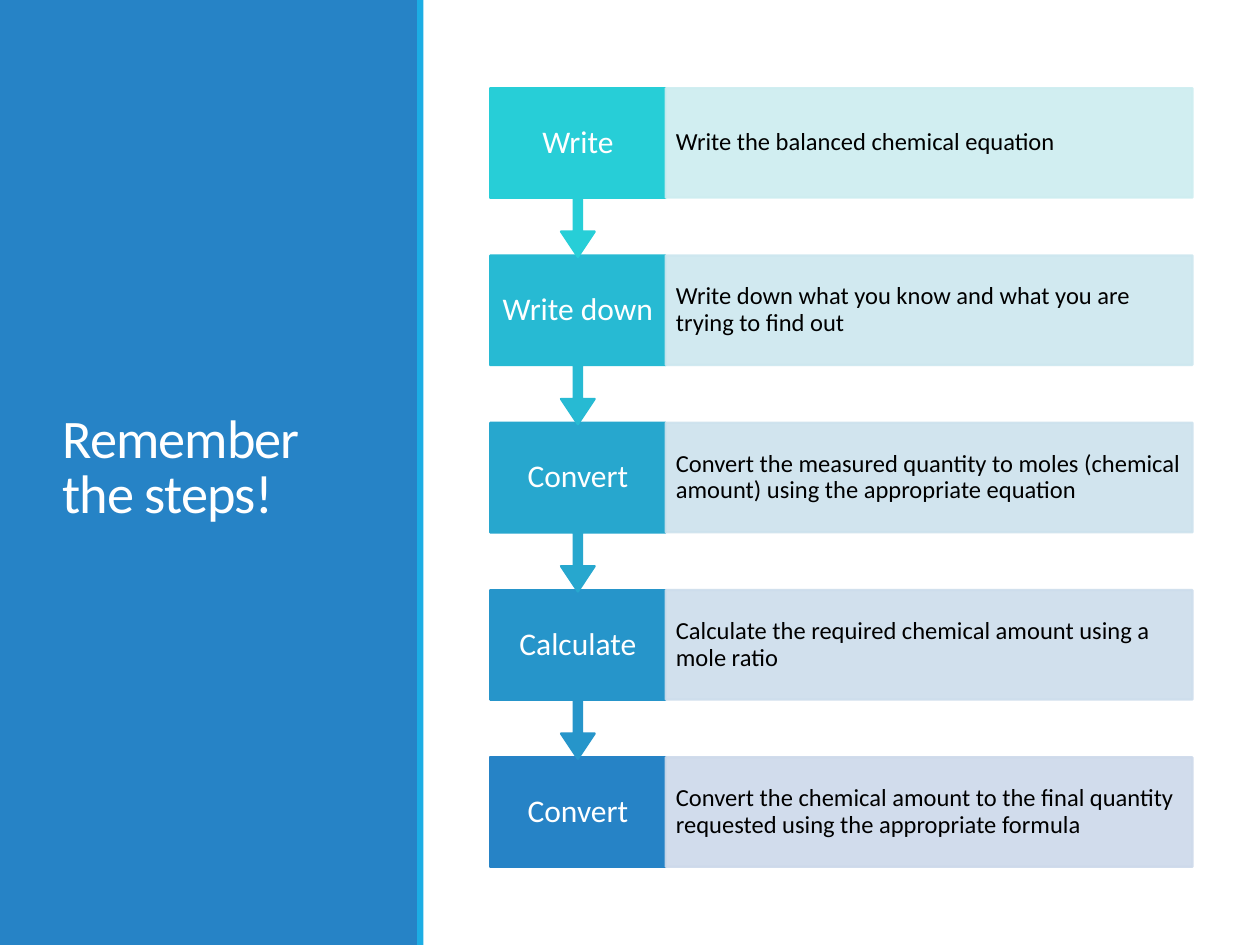
from lxml.etree import SubElement as Sub
from pptx import Presentation
from pptx.dml.color import RGBColor
from pptx.enum.shapes import MSO_SHAPE as Kind
from pptx.enum.text import MSO_ANCHOR as Anchor, PP_ALIGN as Align
from pptx.oxml.ns import qn
from pptx.util import Pt

STEPS = [
    ("Write", "Write the balanced chemical equation", "27CED7", "CDEDF0"),
    ("Write down", "Write down what you know and what you are trying to find out",
     "27BAD3", "CDE7EF"),
    ("Convert", "Convert the measured quantity to moles (chemical amount) "
     "using the appropriate equation", "27A7CE", "CDE2ED"),
    ("Calculate", "Calculate the required chemical amount using a mole ratio",
     "2695CA", "CDDDEC"),
    ("Convert", "Convert the chemical amount to the final quantity requested "
     "using the appropriate formula", "2683C6", "CDD9EA"),
]
LEFT, TOP, PITCH = 280.1, 50.4, 95.6
TAG, PANEL, HIGH, DROP = 100.3, 301, 62.6, 96.4


def paint(item, color):
    item.rgb = RGBColor.from_string(color)


def block(slide, kind, box, color, edge=False):
    shape = slide.shapes.add_shape(kind, *map(Pt, box))
    shape.shadow.inherit = False
    shape.fill.solid()
    paint(shape.fill.fore_color, color)
    if edge:
        shape.line.width = Pt(1.25)
        paint(shape.line.color, color)
    else:
        shape.line.fill.background()
    return shape


def fade(shape, share):
    for node in shape._element.spPr.iter(qn("a:srgbClr")):
        Sub(node, qn("a:alpha"), val=str(share * 1000))


def write(shape, text, size, color, align, space, pads):
    frame = shape.text_frame
    frame.word_wrap = True
    frame.vertical_anchor = Anchor.MIDDLE
    frame.margin_left = frame.margin_right = Pt(pads[0])
    frame.margin_top = frame.margin_bottom = Pt(pads[1])
    para = frame.paragraphs[0]
    para.text = text
    para.alignment = align
    para.line_spacing = space
    para.font.name = "Calibri"
    para.font.size = Pt(size)
    paint(para.font.color, color)
    return para


def title(slide, text):
    box = slide.shapes.add_textbox(*map(Pt, (28.8, 41, 182.2, 454.3)))
    para = write(box, text, 31, "FFFFFF", Align.LEFT, 0.85, (7.2, 3.6))
    for run in para.runs:
        run.font._element.set("spc", "-50")


def step(slide, row, label, text, dark, light):
    top = TOP + row * PITCH
    if row == len(STEPS) - 1:
        tag = block(slide, Kind.RECTANGLE, (LEFT, top, TAG, HIGH), dark, True)
    else:
        tag = block(slide, Kind.DOWN_ARROW_CALLOUT,
                    (LEFT, top, TAG, DROP), dark, True)
        for spot, value in enumerate((0.05, 0.1, 0.15, 0.65)):
            tag.adjustments[spot] = value
    write(tag, label, 18, "FFFFFF", Align.CENTER, 0.9, (7.1, 10.1))
    panel = block(slide, Kind.RECTANGLE,
                  (LEFT + TAG, top, PANEL, HIGH), light, True)
    fade(panel, 90)
    write(panel, text, 14, "000000", Align.LEFT, 0.9, (5.8, 13.7))


def main():
    deck = Presentation()
    deck.slide_width, deck.slide_height = Pt(720), Pt(540)
    slide = deck.slides.add_slide(deck.slide_layouts[6])
    block(slide, Kind.RECTANGLE, (0, 0, 239, 540), "2683C6")
    title(slide, "Remember the steps!")
    block(slide, Kind.RECTANGLE, (238.4, 0, 3.6, 540), "1CADE4")
    for row, data in reversed(list(enumerate(STEPS))):
        step(slide, row, *data)
    deck.save("out.pptx")


if __name__ == "__main__":
    main()
